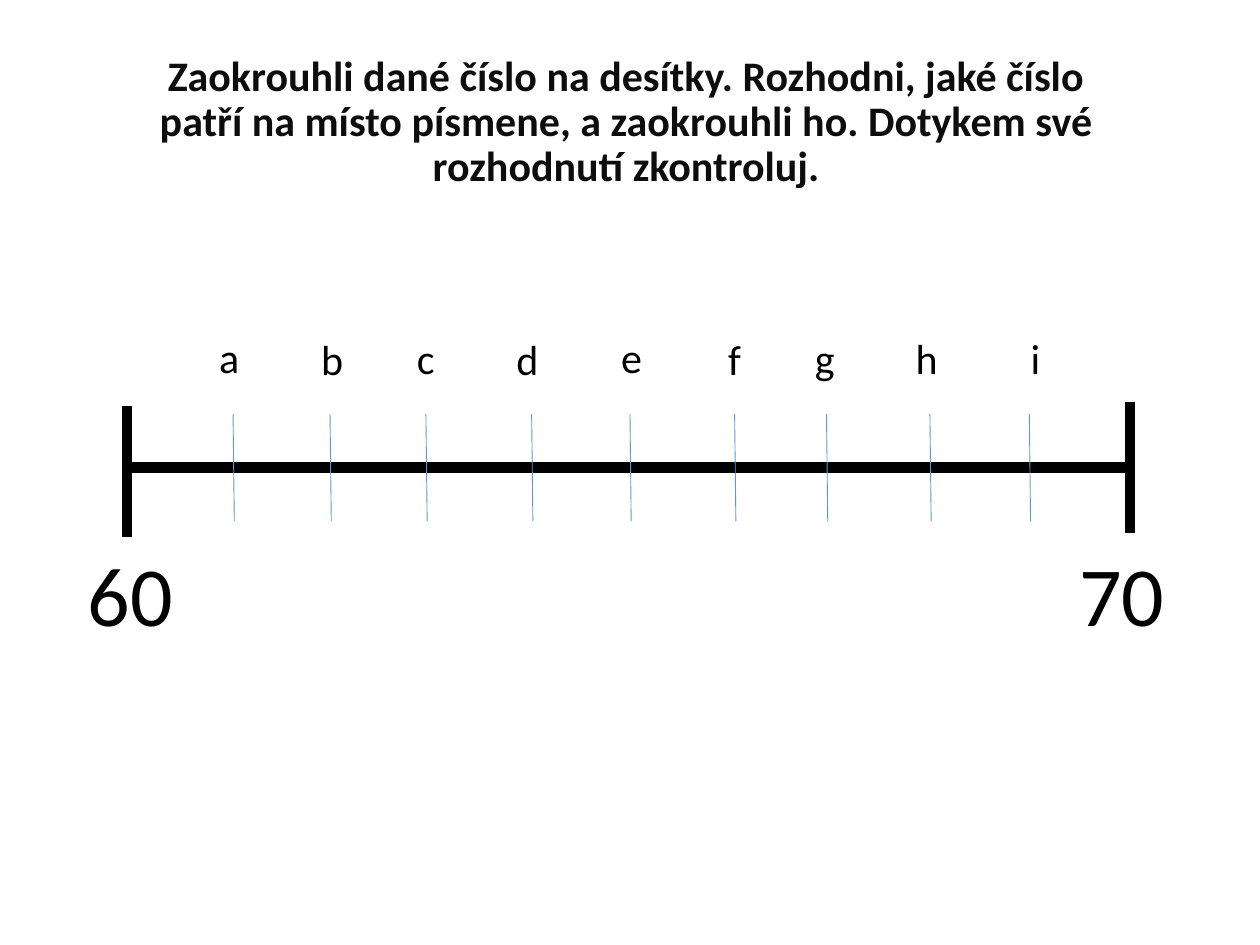
from lxml.etree import SubElement
from pptx import Presentation
from pptx.dml.color import RGBColor
from pptx.enum.shapes import MSO_CONNECTOR
from pptx.enum.text import MSO_ANCHOR, MSO_AUTO_SIZE, PP_ALIGN
from pptx.oxml.ns import qn
from pptx.util import Pt

TITLE = ("Zaokrouhli dané číslo na desítky. Rozhodni, jaké číslo patří na místo "
         "písmene, a zaokrouhli ho. Dotykem své rozhodnutí zkontroluj.")
TITLE_BOX = (72.7, 25.2, 570.2, 90)

AXIS_Y, AXIS_START, AXIS_END = 267.1, 72.7, 643
# x and top of the end marks
END_MARKS = [(72.7, 231.8), (645.8, 229.7)]
END_MARK_HEIGHT = 74.9
TICK_TOP, TICK_HEIGHT, TICK_SLANT = 236.6, 61.2, 0.7

# text, left, top, width
END_NUMBERS = [("60", 43.2, 306.7, 67.7), ("70", 609.8, 306.7, 74.9)]
# letter, tick x, label left, label top, label width
LETTERS = [
    ("a", 133.2, 118.1, 185.8, 45.4),
    ("b", 188.6, 176.4, 187.2, 58.3),
    ("c", 243.4, 231.1, 186.5, 50.4),
    ("d", 303.8, 288, 187.2, 46.8),
    ("e", 360, 347.8, 185.8, 43.9),
    ("f", 419.8, 409, 187.2, 42.5),
    ("g", 472.3, 458.6, 186.5, 43.9),
    ("h", 531.4, 516.2, 186.5, 39.6),
    ("i", 588.2, 581.8, 186.5, 43.9),
]
HEAVY = ("000000", 6)
THIN = ("5B9BD5", 0.5)


def rgb(value):
    return RGBColor.from_string(value)


def set_format(target, values):
    for name, value in values.items():
        setattr(target, name, value)


def style_font(font, size, color, bold=False):
    set_format(font, {"name": "Calibri", "size": Pt(size), "bold": bold})
    font.color.rgb = rgb(color)


def add_line(group, x1, y1, x2, y2, style):
    color, width = style
    line = group.shapes.add_connector(
        MSO_CONNECTOR.STRAIGHT, *map(Pt, (x1, y1, x2, y2)))
    line.line.color.rgb = rgb(color)
    line.line.width = Pt(width)
    SubElement(line._element.spPr, qn("a:effectLst"))


def add_label(slide, text, left, top, width, height, size):
    box = slide.shapes.add_textbox(*map(Pt, (left, top, width, height)))
    set_format(box.text_frame, {
        "text": text, "word_wrap": True,
        "auto_size": MSO_AUTO_SIZE.SHAPE_TO_FIT_TEXT})
    style_font(box.text_frame.paragraphs[0].runs[0].font, size, "000000")


def add_title(slide):
    title = slide.shapes.title
    set_format(title, dict(zip(("left", "top", "width", "height"),
                               map(Pt, TITLE_BOX))))
    set_format(title.text_frame, {
        "text": TITLE, "word_wrap": True, "auto_size": MSO_AUTO_SIZE.NONE,
        "vertical_anchor": MSO_ANCHOR.MIDDLE})
    paragraph = title.text_frame.paragraphs[0]
    set_format(paragraph, {"alignment": PP_ALIGN.CENTER, "line_spacing": 0.9})
    style_font(paragraph.runs[0].font, 24, "0D0D0D", bold=True)


def add_number_line(slide):
    group = slide.shapes.add_group_shape()
    add_line(group, AXIS_START, AXIS_Y, AXIS_END, AXIS_Y, HEAVY)
    for x, top in END_MARKS:
        add_line(group, x, top, x, top + END_MARK_HEIGHT, HEAVY)
    for _, x, *_ in LETTERS:
        add_line(group, x, TICK_TOP, x + TICK_SLANT, TICK_TOP + TICK_HEIGHT, THIN)


def main():
    presentation = Presentation()
    set_format(presentation, {"slide_width": Pt(720), "slide_height": Pt(540)})
    slide = presentation.slides.add_slide(presentation.slide_layouts[5])
    add_title(slide)
    add_number_line(slide)
    for number, left, top, width in END_NUMBERS:
        add_label(slide, number, left, top, width, 65.5, 48)
    for letter, _, left, top, width in LETTERS:
        add_label(slide, letter, left, top, width, 36, 24)
    presentation.save("out.pptx")


if __name__ == "__main__":
    main()
